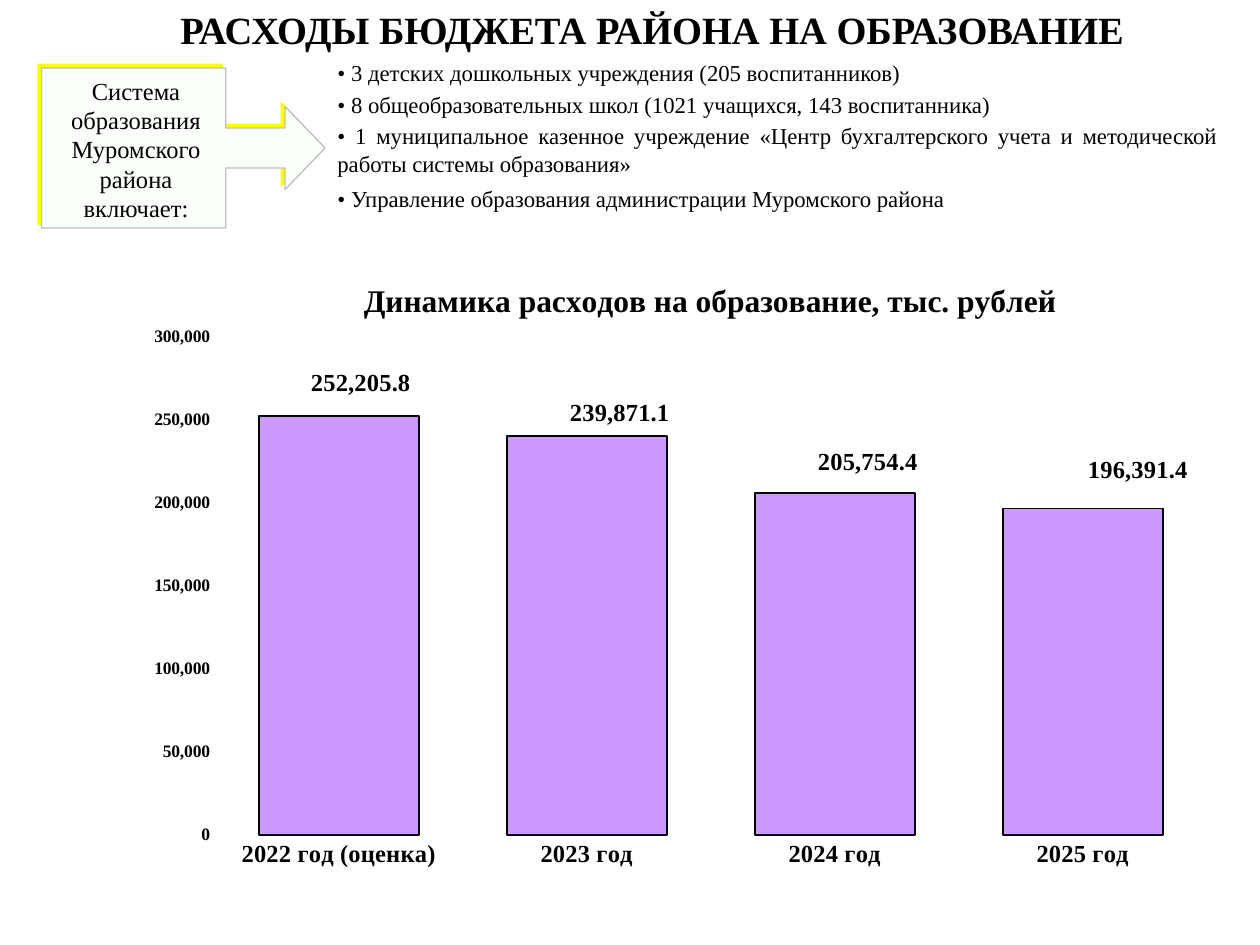
from typing import NamedTuple

from pptx import Presentation
from pptx.chart.data import CategoryChartData
from pptx.dml.color import RGBColor
from pptx.enum.chart import XL_CHART_TYPE, XL_TICK_MARK
from pptx.enum.shapes import MSO_SHAPE
from pptx.enum.text import PP_ALIGN
from pptx.oxml import parse_xml
from pptx.oxml.ns import nsdecls, qn
from pptx.util import Inches, Pt

CENTER, LEFT, JUSTIFY = PP_ALIGN.CENTER, PP_ALIGN.LEFT, PP_ALIGN.JUSTIFY
STACKED = XL_CHART_TYPE.COLUMN_STACKED
NO_TICK = XL_TICK_MARK.NONE
CALLOUT = MSO_SHAPE.RIGHT_ARROW_CALLOUT

FONT = "Times New Roman"
BLACK = RGBColor(0x00, 0x00, 0x00)
WHITE = RGBColor(0xFF, 0xFF, 0xFF)
GRAY = RGBColor(0xBF, 0xBF, 0xBF)
PALE_MINT = RGBColor(0xF9, 0xFF, 0xF9)
YELLOW = RGBColor(0xFF, 0xFF, 0x00)
LILAC = RGBColor(0xCC, 0x99, 0xFF)


class Label(NamedTuple):
    text: str
    left: float
    top: float
    width: float
    height: float
    size: int
    align: PP_ALIGN = LEFT
    bold: bool = False


class Year(NamedTuple):
    name: str
    spending: float
    label_dx: float
    label_dy: float


LABELS = [
    Label("РАСХОДЫ БЮДЖЕТА РАЙОНА НА ОБРАЗОВАНИЕ", 1.08, 0, 8.19, 0.47, 22, CENTER, True),
    Label("Система образования Муромского района включает:", 0.33, 0.55, 1.5, 1.28, 14, CENTER),
    Label("• 3 детских дошкольных учреждения (205 воспитанников)", 2.58, 0.42, 5.01, 0.32, 13),
    Label("• 8 общеобразовательных школ (1021 учащихся, 143 воспитанника)",
          2.58, 0.67, 5.83, 0.32, 13, JUSTIFY),
    Label("• 1 муниципальное казенное учреждение «Центр бухгалтерского учета и методической "
          "работы системы образования»", 2.58, 0.92, 7.17, 0.53, 13, JUSTIFY),
    Label("• Управление образования администрации Муромского района", 2.58, 1.42, 5.62, 0.32, 13),
]

YEARS = [
    Year("2022 год (оценка)", 252205.8, 0.02, -0.36),
    Year("2023 год", 239871.1, 0.03, -0.33),
    Year("2024 год", 205754.4, 0.03, -0.3),
    Year("2025 год", 196391.4, 0.05, -0.3),
]


def set_font(font, size: int, bold: bool) -> None:
    font.name, font.size, font.bold = FONT, Pt(size), bold
    font.color.rgb = BLACK


def add_label(slide, label: Label) -> None:
    box = slide.shapes.add_textbox(*map(Inches, label[1:5]))
    tf = box.text_frame
    tf.word_wrap = True
    p = tf.paragraphs[0]
    p.text, p.alignment = label.text, label.align
    set_font(p.font, label.size, label.bold)


def add_callout(slide) -> None:
    """Arrow callout with a sharp yellow shadow to the upper left."""
    sp = slide.shapes.add_shape(CALLOUT, Inches(0.33), Inches(0.54), Inches(2.25), Inches(1.27))
    for i, value in enumerate((0.25, 0.26, 0.25, 0.65)):
        sp.adjustments[i] = value
    sp.fill.solid()
    sp.fill.fore_color.rgb = PALE_MINT
    sp.line.color.rgb = GRAY
    sp.line.width = Pt(0.75)
    sp.shadow.inherit = False
    effects = sp._element.spPr.find(qn("a:effectLst"))
    effects.append(parse_xml(
        f'<a:outerShdw {nsdecls("a")} blurRad="0" dist="{Pt(3)}" dir="13500000" '
        f'algn="br" rotWithShape="0"><a:srgbClr val="{YELLOW}"/></a:outerShdw>'))


def layout_xml(target: str = "", mode: str = "", **place: float):
    """Manual chart layout; keys of place are x, y, w and h."""
    target_xml = f'<c:layoutTarget val="{target}"/>' if target else ""
    modes = "".join(f'<c:{axis}Mode val="{mode}"/>' for axis in "xy") if mode else ""
    values = "".join(f'<c:{key} val="{value}"/>' for key, value in place.items())
    return parse_xml(f'<c:layout {nsdecls("c")}><c:manualLayout>{target_xml}{modes}{values}'
                     '</c:manualLayout></c:layout>')


def replace_layout(parent, layout, index: int) -> None:
    for old in parent.findall(qn("c:layout")):
        parent.remove(old)
    parent.insert(index, layout)


def format_axis(axis, size: int) -> None:
    axis.major_tick_mark = axis.minor_tick_mark = NO_TICK
    axis.format.line.color.rgb = WHITE
    axis.format.line.width = Pt(0.25)
    set_font(axis.tick_labels.font, size, True)


def add_value_labels(series) -> None:
    """Label every bar above its top, without leader lines."""
    labels = series.data_labels
    labels.show_value = True
    labels.number_format, labels.number_format_is_linked = "#,##0.0", False
    set_font(labels.font, 14, True)
    for leader in labels._element.findall(qn("c:showLeaderLines")):
        leader.set("val", "0")
    for i, year in enumerate(YEARS):
        flags = "".join(f'<c:show{name} val="{int(name == "Val")}"/>' for name in
                        ("LegendKey", "Val", "CatName", "SerName", "Percent", "BubbleSize"))
        point = parse_xml(f'<c:dLbl {nsdecls("c")}><c:idx val="{i}"/>{flags}</c:dLbl>')
        point.insert(1, layout_xml(x=year.label_dx, y=year.label_dy))
        labels._element.insert(i, point)


def add_spending_chart(slide) -> None:
    data = CategoryChartData()
    data.categories = [year.name for year in YEARS]
    data.add_series("Расходы", [year.spending for year in YEARS])
    chart = slide.shapes.add_chart(STACKED, Inches(0.83), Inches(1.92), Inches(8.75),
                                   Inches(5.35), data).chart
    set_font(chart.font, 10, False)
    chart.has_legend = False

    title = chart.chart_title
    p = title.text_frame.paragraphs[0]
    p.text = "Динамика расходов на образование, тыс. рублей"
    set_font(p.font, 18, True)
    replace_layout(title._element, layout_xml(mode="edge", x=0.23, y=0.05), 1)
    area = chart._chartSpace.chart.plotArea
    replace_layout(area, layout_xml("inner", "edge", x=0.12, y=0.14, w=0.9, h=0.74), 0)

    format_axis(chart.category_axis, 14)
    axis = chart.value_axis
    format_axis(axis, 10)
    axis.minimum_scale, axis.maximum_scale, axis.major_unit = 0, 300000, 50000
    axis.tick_labels.number_format = "#,##0"
    axis.tick_labels.number_format_is_linked = False
    grid = axis.major_gridlines.format.line
    grid.color.rgb, grid.width = WHITE, Pt(0.25)

    plot = chart.plots[0]
    plot.gap_width, plot.overlap, plot.vary_by_categories = 55, 100, False
    series = plot.series[0]
    series.format.fill.solid()
    series.format.fill.fore_color.rgb = LILAC
    series.format.line.color.rgb = BLACK
    series.format.line.width = Pt(1)
    add_value_labels(series)


def main() -> None:
    prs = Presentation()
    prs.slide_width, prs.slide_height = Inches(10), Inches(7.5)
    slide = prs.slides.add_slide(prs.slide_layouts[6])
    add_callout(slide)
    for label in LABELS:
        add_label(slide, label)
    add_spending_chart(slide)
    prs.save("out.pptx")


if __name__ == "__main__":
    main()
